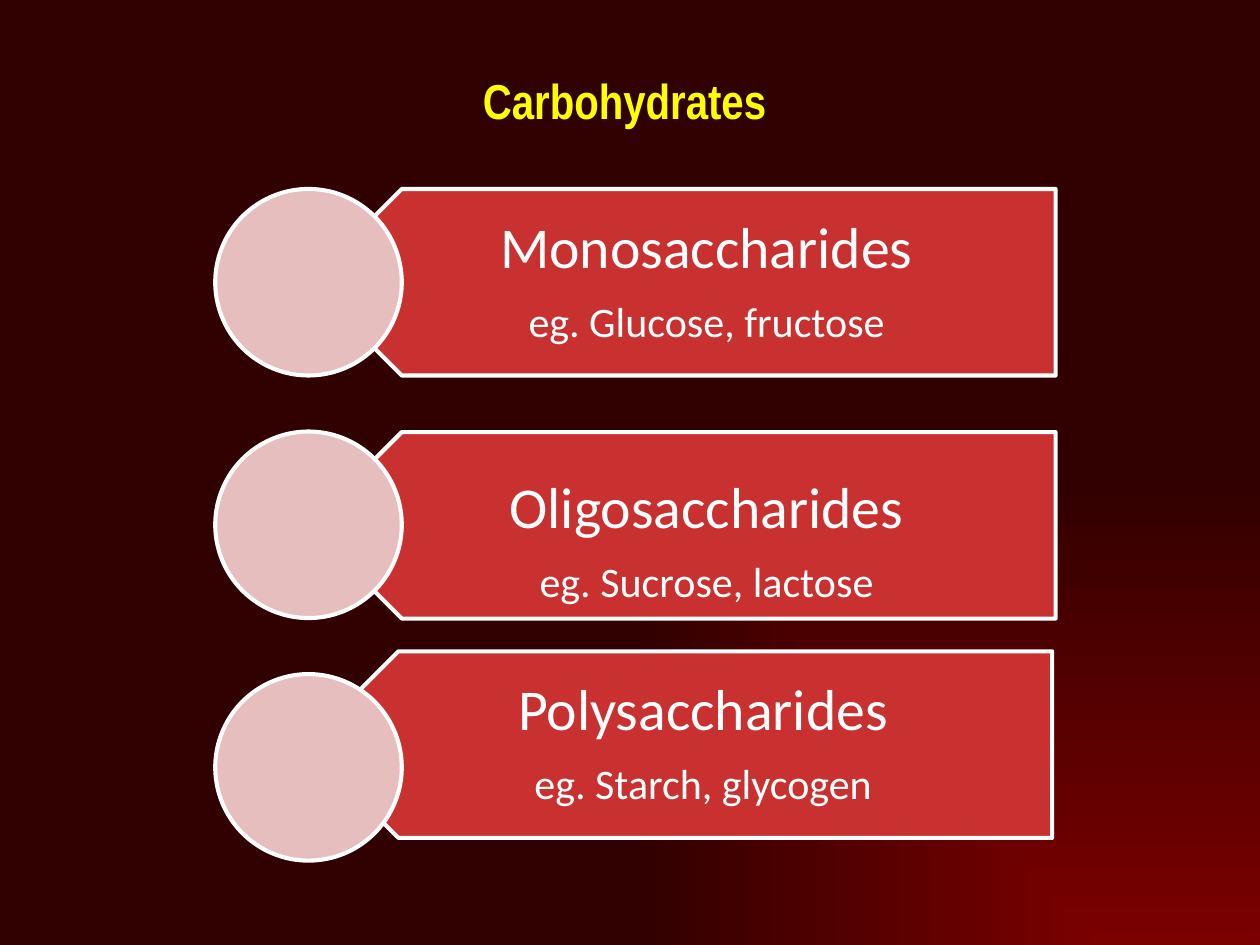
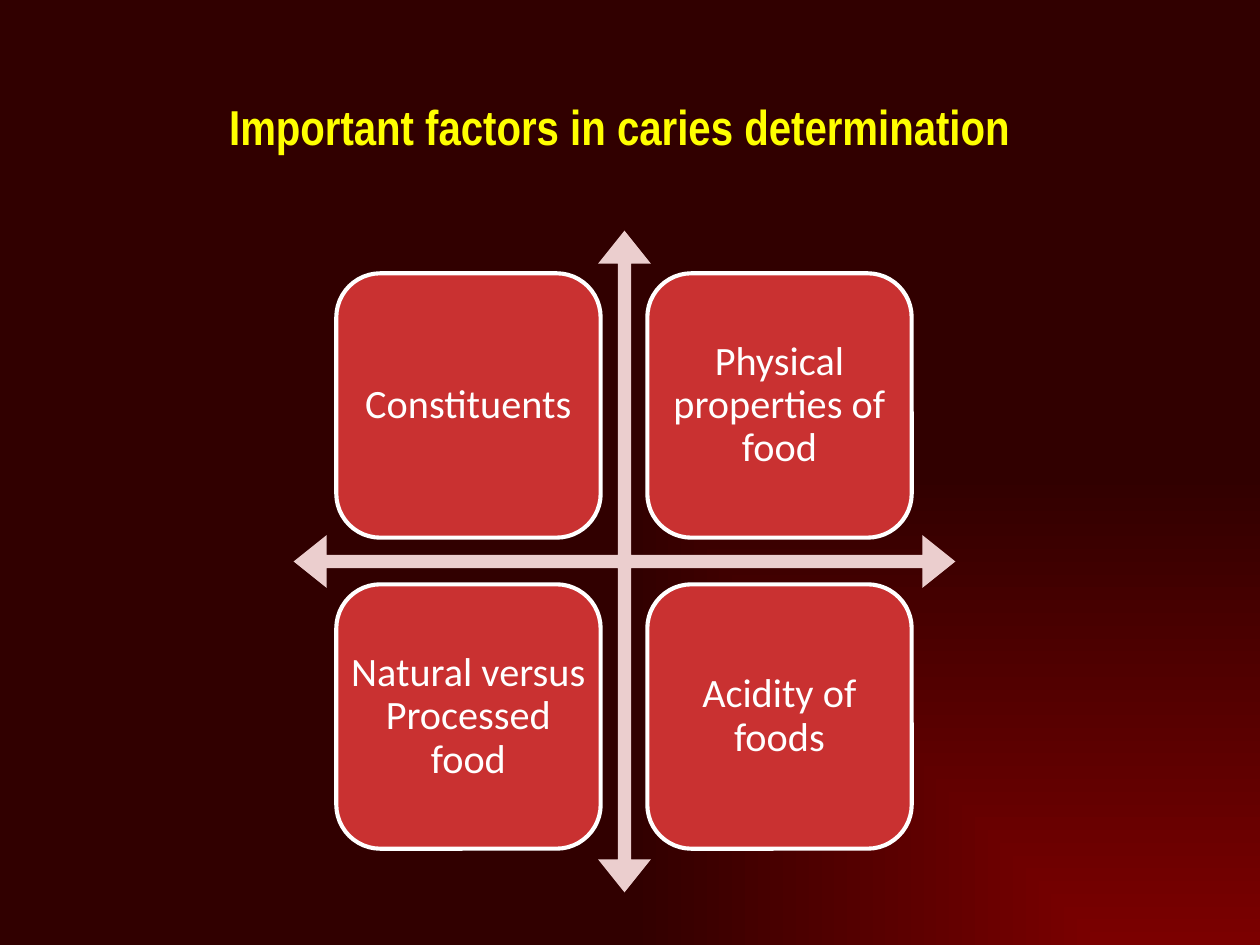
from lxml import etree
from pptx import Presentation
from pptx.dml.color import RGBColor
from pptx.enum.shapes import MSO_SHAPE
from pptx.enum.text import MSO_ANCHOR, PP_ALIGN
from pptx.oxml.ns import qn
from pptx.util import Cm, Pt

PLATE, DISC = MSO_SHAPE.PENTAGON, MSO_SHAPE.OVAL
TILE, CROSS = MSO_SHAPE.ROUNDED_RECTANGLE, MSO_SHAPE.QUAD_ARROW
MIDDLE, CENTER = MSO_ANCHOR.MIDDLE, PP_ALIGN.CENTER
COLORS = {"glow": "7B0000", "dark": "310000", "title": "FFFF00", "red": "C93131",
          "pink": "E6BEBE", "pale": "EBCECE", "white": "FFFFFF"}
RGB = {name: RGBColor.from_string(code) for name, code in COLORS.items()}


def draw(slide, kind, box, fill, edge=True):
    shape = slide.shapes.add_shape(kind, *[Cm(n) for n in box])
    shape.shadow.inherit = False
    shape.fill.solid()
    shape.fill.fore_color.rgb = RGB[fill]
    if edge:
        shape.line.color.rgb = RGB["white"]
        shape.line.width = Pt(2.36)
    else:
        shape.line.fill.background()
    return shape


def write(shape, lines, sizes, pads):
    frame = shape.text_frame
    frame.text = "\n".join(lines)
    frame.word_wrap = True
    frame.vertical_anchor = MIDDLE
    frame.margin_left, frame.margin_top, frame.margin_right, frame.margin_bottom = [
        Cm(n) for n in pads]
    for para, size in zip(frame.paragraphs, sizes):
        para.alignment = CENTER
        para.line_spacing = 0.9
        para.space_after = Pt(0.35 * size)
        font = para.runs[0].font
        font.name, font.size = "Calibri", Pt(size)
        font.color.rgb = RGB["white"]


deck = Presentation()
deck.slide_width, deck.slide_height = Cm(25.4), Cm(19.05)

master = deck.slide_master
fill = master.background.fill
fill.gradient()
for stop, name in zip(fill.gradient_stops, ("glow", "dark")):
    stop.color.rgb = RGB[name]
grad = master.element.find(".//" + qn("p:bgPr") + "/" + qn("a:gradFill"))
grad.remove(grad.find(qn("a:lin")))
route = etree.SubElement(grad, qn("a:path"), path="rect")
etree.SubElement(route, qn("a:fillToRect"), l="100000", t="100000")

TITLES = [("Carbohydrates", (0.84, 0.64, 23.5, 2.74)),
          ("Important factors in caries determination", (1.27, 1.27, 22.43, 2.54))]
for text, box in TITLES:
    slide = deck.slides.add_slide(deck.slide_layouts[5])
    title = slide.shapes.title
    title.left, title.top, title.width, title.height = [Cm(n) for n in box]
    title.text_frame.text = text
    title.text_frame.vertical_anchor = MIDDLE
    para = title.text_frame.paragraphs[0]
    para.alignment = CENTER
    font = para.runs[0].font
    font.name, font.size, font.bold = "Arial Narrow", Pt(28), True
    font.color.rgb = RGB["title"]
sugars, factors = deck.slides

GROUPS = [("Monosaccharides", "eg. Glucose, fructose", 6.22, 3.81, 0),
          ("Oligosaccharides", "eg. Sucrose, lactose", 6.22, 8.71, 0.34),
          ("Polysaccharides", "eg. Starch, glycogen", 6.15, 13.13, 0)]
wide, high = 15.06, 3.76
for row, (name, sample, left, top, drop) in enumerate(GROUPS):
    draw(sugars, PLATE, (left, top, wide, high), "red").rotation = 180
    label = sugars.shapes.add_textbox(Cm(left), Cm(top + drop), Cm(wide), Cm(high))
    write(label, (name, sample), (33, 24), (1.65, 0.36, 0.66, 0.36))
    draw(sugars, DISC, (4.34, 3.81 + 4.89 * row, high, high), "pink")

cross = draw(factors, CROSS, (5.92, 4.65, 13.34, 13.34), "pale", edge=False)
for i, ratio in enumerate((0.02, 0.04, 0.05)):
    cross.adjustments[i] = ratio
TILES = ["Constituents", "Physical properties of food",
         "Natural versus Processed food", "Acidity of foods"]
side, pitch = 5.33, 6.27
for i, text in enumerate(TILES):
    row, col = divmod(i, 2)
    tile = draw(factors, TILE, (6.78 + pitch * col, 5.51 + pitch * row, side, side), "red")
    write(tile, [text], [23], (0, 0, 0, 0))

deck.save("out.pptx")
